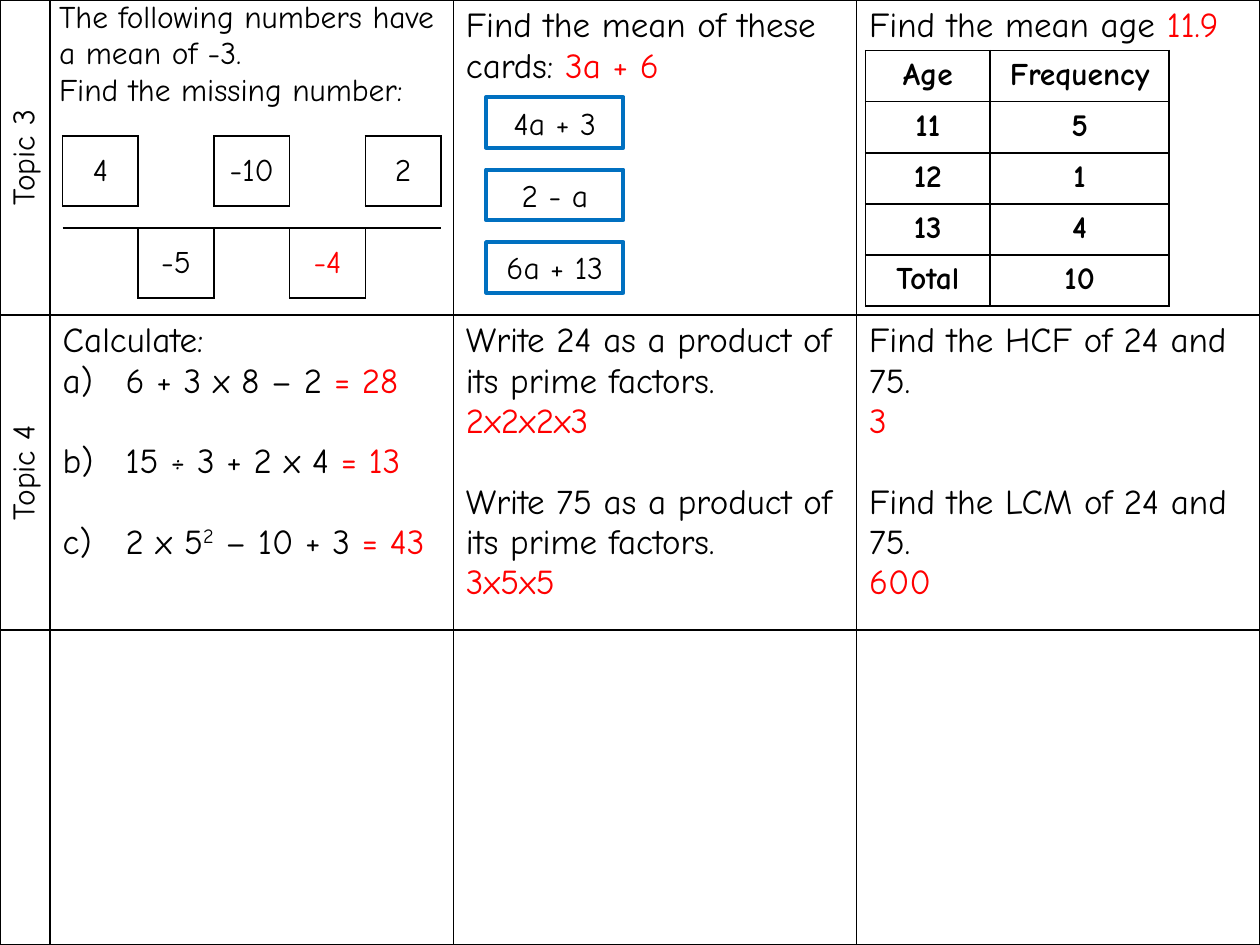
from lxml.etree import SubElement
from pptx import Presentation
from pptx.dml.color import RGBColor
from pptx.enum.shapes import MSO_SHAPE
from pptx.enum.text import MSO_ANCHOR, PP_ALIGN
from pptx.oxml.ns import qn
from pptx.util import Cm, Pt

COLOURS = {"ink": "000000", "red": "FF0000", "card": "0070C0"}
FONT = "Comic Neue"
PLAIN = "{2D5ABB26-0587-4C30-8999-92F81FD0307C}"
SIDES = {"lnL": (0, -1), "lnR": (0, 1), "lnT": (-1, 0), "lnB": (1, 0)}
LEAD = 23


def colour(name):
    """Return the named colour."""
    return RGBColor.from_string(COLOURS[name])


def write(frame, paras, size=20, align=PP_ALIGN.LEFT, bold=False, gaps=()):
    """Write paragraphs of (text, kind) runs, leaving a line before those in gaps."""
    for row, runs in enumerate(paras):
        para = frame.paragraphs[0] if row == 0 else frame.add_paragraph()
        para.alignment = align
        if row in gaps:
            para.space_before = Pt(LEAD)
        for text, kind in runs:
            run = para.add_run()
            run.text = text
            font = run.font
            font.name, font.size, font.bold = FONT, Pt(size), bold
            font.color.rgb = colour("ink" if kind == "sup" else kind)
            if kind == "sup":
                run._r.get_or_add_rPr().set("baseline", "30000")


def shrink(cell):
    """Keep an empty cell from stretching its row."""
    cell.margin_top = cell.margin_bottom = 0
    para = cell.text_frame.paragraphs[0]
    SubElement(para._p, qn("a:endParaRPr")).set("sz", "100")


def number(para):
    """Give a paragraph a hanging a) b) c) label."""
    props = para._p.get_or_add_pPr()
    props.set("marL", str(Cm(1.27)))
    props.set("indent", str(-Cm(1.27)))
    SubElement(props, qn("a:buFont")).set("typeface", FONT)
    SubElement(props, qn("a:buAutoNum")).set("type", "alphaLcParenR")


def edge(cell, side):
    """Draw one black side of a cell."""
    line = SubElement(cell._tc.get_or_add_tcPr(), qn("a:" + side), w=str(Pt(1)))
    fill = SubElement(line, qn("a:solidFill"))
    SubElement(fill, qn("a:srgbClr")).set("val", COLOURS["ink"])


def grid(slide, left, top, cols, rows, boxed=None):
    """Add an unfilled table ruled round every cell, or round the boxed cells."""
    frame = slide.shapes.add_table(len(rows), len(cols), Cm(left), Cm(top),
                                   Cm(sum(cols)), Cm(sum(rows)))
    table = frame.table
    table.first_row = table.horz_banding = False
    table._tbl.tblPr.find(qn("a:tableStyleId")).text = PLAIN
    for col, width in zip(table.columns, cols):
        col.width = Cm(width)
    for row, height in zip(table.rows, rows):
        row.height = Cm(height)
    for r in range(len(rows)):
        for c in range(len(cols)):
            cell = table.cell(r, c)
            for side, (down, right) in SIDES.items():
                near = {(r, c), (r + down, c + right)}
                if boxed is None or near & set(boxed):
                    edge(cell, side)
            cell.fill.background()
    return table


def sheet(slide, left, top, width, height):
    """Add the page grid with its topics and questions."""
    strip = 1.01
    table = grid(slide, left, top, [strip] + [(width - strip) / 3] * 3, [height / 3] * 3)
    for row, topic in enumerate(("Topic 3", "Topic 4")):
        cell = table.cell(row, 0)
        cell._tc.get_or_add_tcPr().set("vert", "vert270")
        write(cell.text_frame, [[(topic, "ink")]], 18, PP_ALIGN.CENTER)

    first = table.cell(0, 1)
    first.margin_left = first.margin_right = Cm(0.18)
    first.margin_top = first.margin_bottom = 0
    write(first.text_frame, [
        [("The following numbers have a mean of -3.", "ink")],
        [("Find the missing number:", "ink")]], 18)
    write(table.cell(0, 2).text_frame,
          [[("Find the mean of these cards: ", "ink"), ("3a + 6", "red")]])
    write(table.cell(0, 3).text_frame,
          [[("Find the mean age ", "ink"), ("11.9", "red")]])

    sums = table.cell(1, 1).text_frame
    write(sums, [
        [("Calculate:", "ink")],
        [("6 + 3 x 8 – 2", "ink"), (" = 28", "red")],
        [("15 ÷ 3 + 2 x 4", "ink"), (" = 13", "red")],
        [("2 x 5", "ink"), ("2", "sup"), (" – 10 + 3", "ink"), (" = 43", "red")],
    ], gaps=(2, 3))
    for para in sums.paragraphs[1:]:
        number(para)

    pairs = (
        (("Write 24 as a product of its prime factors.", "2x2x2x3"),
         ("Write 75 as a product of its prime factors.", "3x5x5")),
        (("Find the HCF of 24 and 75.", "3"),
         ("Find the LCM of 24 and 75.", "600")))
    for col, pair in enumerate(pairs, 2):
        paras = [[(text, kind)] for item in pair
                 for text, kind in zip(item, ("ink", "red"))]
        write(table.cell(1, col).text_frame, paras, gaps=(2,))


def ages(slide, left, top, width, height):
    """Add the age and frequency table."""
    data = (("Age", "Frequency"), ("11", "5"), ("12", "1"), ("13", "4"), ("Total", "10"))
    table = grid(slide, left, top, [width * 0.41, width * 0.59],
                 [height / len(data)] * len(data))
    for r, row in enumerate(data):
        for c, text in enumerate(row):
            write(table.cell(r, c).text_frame, [[(text, "ink")]], 18,
                  PP_ALIGN.CENTER, True)


def cards(slide, left, top, width, height):
    """Stack the algebra cards."""
    tall = 1.02
    step = (height - tall) / 2
    for row, text in enumerate(("4a + 3", "2 - a", "6a + 13")):
        card = slide.shapes.add_shape(MSO_SHAPE.RECTANGLE, Cm(left),
                                      Cm(top + row * step), Cm(width), Cm(tall))
        card.shadow.inherit = False
        card.fill.background()
        card.line.color.rgb = colour("card")
        card.line.width = Pt(2.25)
        write(card.text_frame, [[(text, "ink")]], 18, PP_ALIGN.CENTER)


def tiles(slide, left, top, width, height):
    """Add the staggered number tiles."""
    tall = 1.41
    values = {(0, 0): "4", (0, 2): "-10", (0, 4): "2", (2, 1): "-5", (2, 3): "-4"}
    table = grid(slide, left, top, [width / 5] * 5,
                 [tall, height - 2 * tall, tall], values)
    for r in range(3):
        for c in range(5):
            cell = table.cell(r, c)
            if (r, c) in values:
                text = values[r, c]
                cell.vertical_anchor = MSO_ANCHOR.MIDDLE
                write(cell.text_frame, [[(text, "red" if text == "-4" else "ink")]],
                      18, PP_ALIGN.CENTER)
            else:
                shrink(cell)


def main():
    """Build and save the slide."""
    deck = Presentation()
    deck.slide_width, deck.slide_height = Cm(25.4), Cm(19.05)
    slide = deck.slides.add_slide(deck.slide_layouts[6])
    sheet(slide, 0, 0, 25.4, 19.05)
    ages(slide, 17.45, 1.02, 6.12, 5.15)
    cards(slide, 9.8, 1.96, 2.77, 3.94)
    tiles(slide, 1.26, 2.74, 7.63, 3.27)
    deck.save("out.pptx")


if __name__ == "__main__":
    main()
